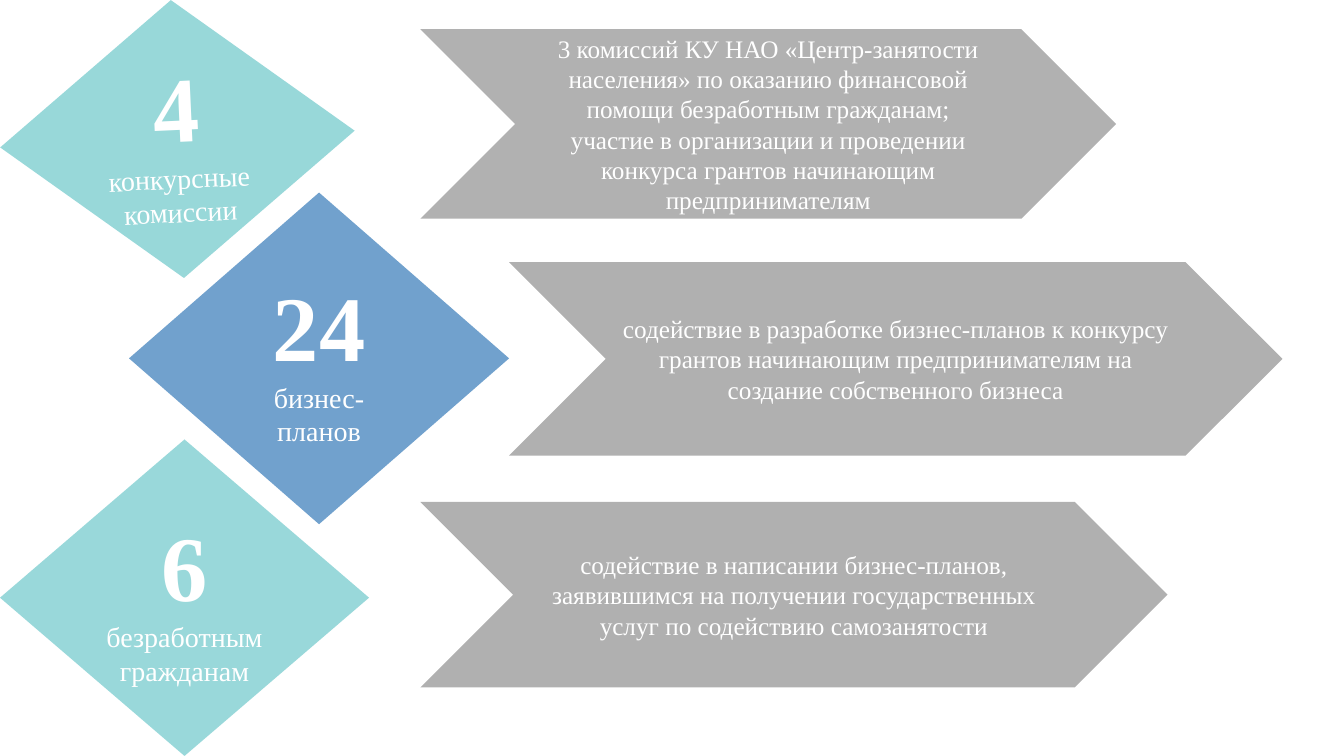
import lxml.etree
import pptx
import pptx.dml.color
import pptx.enum.shapes
import pptx.enum.text
import pptx.oxml.ns
import pptx.util

SLIDE_WIDTH = pptx.util.Inches(13.33)
SLIDE_HEIGHT = pptx.util.Inches(7.5)
FONT = "Times New Roman"
WHITE, TEAL, BLUE, GREY = "FFFFFF", "68C6C8", "2E75B6", "808080"
DIAMOND = pptx.enum.shapes.MSO_SHAPE.DIAMOND
CHEVRON = pptx.enum.shapes.MSO_SHAPE.CHEVRON

INDICATORS = [
    ((0, 0, 26.4, 36.8), TEAL, 68, -2.7, "4", "конкурсные комиссии"),
    ((9.6, 25.47, 28.28, 43.87), BLUE, 68, 0, "24", "бизнес-планов"),
    ((0, 58.13, 27.46, 41.87), TEAL, 67, 0, "6", "безработным гражданам"),
]
ACTIVITIES = [
    ((31.28, 3.87, 51.76, 25.07), 61, [
        "3 комиссий КУ НАО «Центр-занятости населения» по оказанию "
        "финансовой помощи безработным гражданам;",
        "участие в организации и проведении конкурса грантов "
        "начинающим предпринимателям"]),
    ((37.88, 34.67, 57.54, 25.6), 62, [
        "содействие в разработке бизнес-планов к конкурсу грантов "
        "начинающим предпринимателям на создание собственного бизнеса"]),
    ((31.28, 66.4, 55.59, 24.53), 62, [
        "содействие в написании бизнес-планов, заявившимся на получении "
        "государственных услуг по содействию самозанятости"]),
]


def set_color(color_format, value):
    """Set a colour given as a hex string."""
    color_format.rgb = pptx.dml.color.RGBColor.from_string(value)


def set_opacity(shape, percent):
    """Make the solid fill of a shape translucent."""
    fill = shape.element.spPr.find(pptx.oxml.ns.qn("a:solidFill"))
    color = fill.find(pptx.oxml.ns.qn("a:srgbClr"))
    alpha = lxml.etree.SubElement(color, pptx.oxml.ns.qn("a:alpha"))
    alpha.set("val", str(percent * 1000))


def add_paragraph(text_frame, text, size, bold=False):
    """Add a centred white paragraph, using the empty first one if possible."""
    paragraph = text_frame.paragraphs[0]
    if paragraph.runs:
        paragraph = text_frame.add_paragraph()
    paragraph.alignment = pptx.enum.text.PP_ALIGN.CENTER
    run = paragraph.add_run()
    run.text = text
    run.font.name = FONT
    run.font.size = pptx.util.Pt(size)
    run.font.bold = bold
    set_color(run.font.color, WHITE)


def add_panel(slide, kind, box, color, opacity):
    """Add a translucent shape, its box in percent of the slide."""
    left, top, width, height = box
    shape = slide.shapes.add_shape(
        kind,
        int(SLIDE_WIDTH * left / 100), int(SLIDE_HEIGHT * top / 100),
        int(SLIDE_WIDTH * width / 100), int(SLIDE_HEIGHT * height / 100))
    shape.shadow.inherit = False
    shape.line.fill.background()
    shape.fill.solid()
    set_color(shape.fill.fore_color, color)
    set_opacity(shape, opacity)
    shape.text_frame.word_wrap = True
    shape.text_frame.vertical_anchor = pptx.enum.text.MSO_ANCHOR.MIDDLE
    return shape


def add_indicator(slide, box, color, opacity, rotation, number, label):
    """Add a diamond with a large number above its label."""
    shape = add_panel(slide, DIAMOND, box, color, opacity)
    shape.rotation = rotation
    add_paragraph(shape.text_frame, number, 66, bold=True)
    add_paragraph(shape.text_frame, label, 20)


def add_activity(slide, box, opacity, texts):
    """Add a grey chevron describing the work done."""
    shape = add_panel(slide, CHEVRON, box, GREY, opacity)
    for text in texts:
        add_paragraph(shape.text_frame, text, 18)


def main():
    """Build and save the slide."""
    presentation = pptx.Presentation()
    presentation.slide_width = SLIDE_WIDTH
    presentation.slide_height = SLIDE_HEIGHT
    slide = presentation.slides.add_slide(presentation.slide_layouts[6])
    for indicator in INDICATORS:
        add_indicator(slide, *indicator)
    for activity in ACTIVITIES:
        add_activity(slide, *activity)
    presentation.save("out.pptx")


if __name__ == "__main__":
    main()
